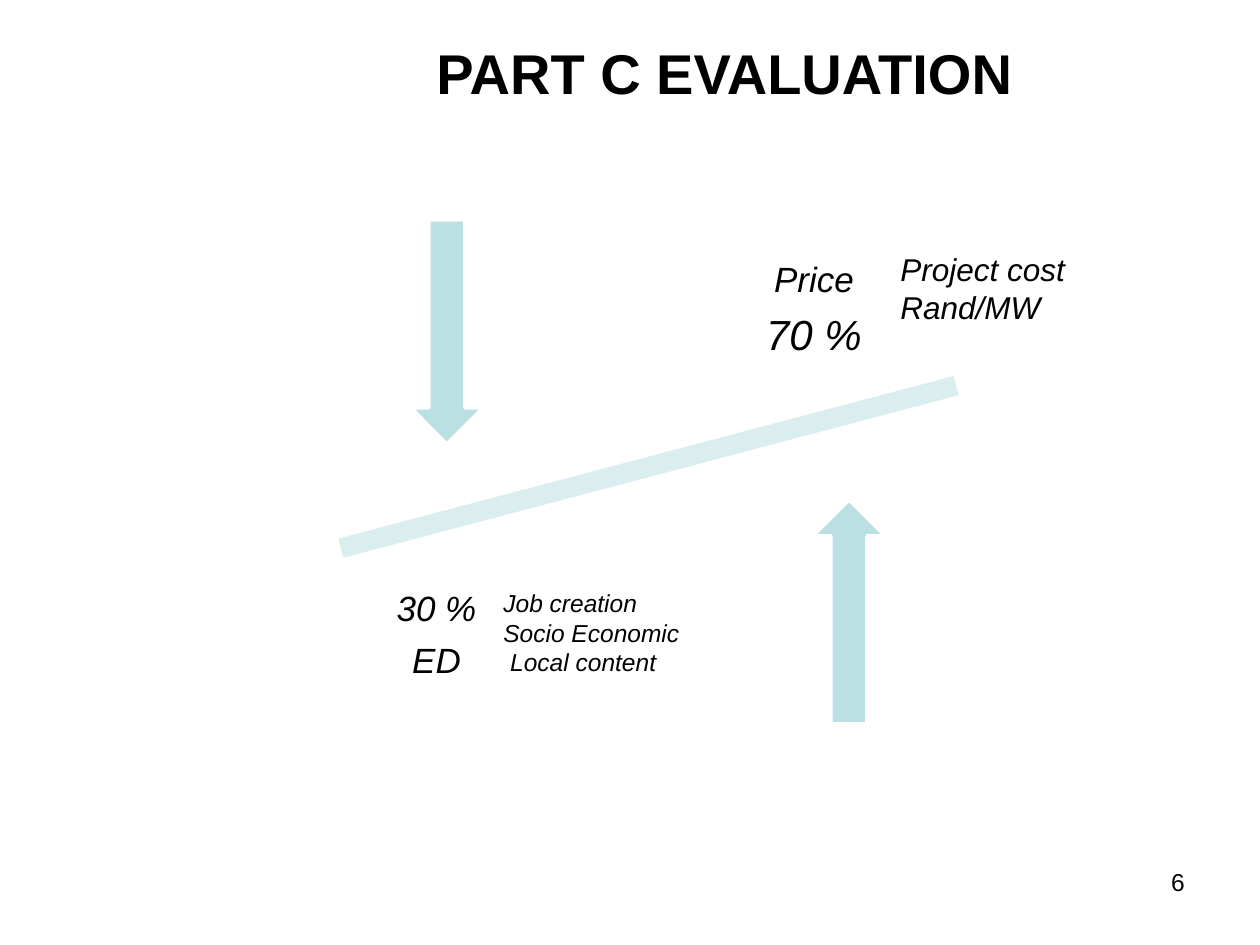
from pptx import Presentation
from pptx.dml.color import RGBColor
from pptx.enum.shapes import MSO_SHAPE
from pptx.enum.text import MSO_ANCHOR, MSO_AUTO_SIZE, PP_ALIGN
from pptx.util import Emu, Pt

PX_PER_INCH = 126
TITLE_ONLY_LAYOUT = 5


def px(length):
    return Emu(round(length * 914400 / PX_PER_INCH))


def color(hex_string):
    return RGBColor.from_string(hex_string)


def write_text(frame, lines, sizes, font="Arial", text_color="000000", bold=False,
               italic=False, align=PP_ALIGN.LEFT, line_spacing=None, space_after=None):
    """Write one paragraph per line, each with its own size in points."""
    for index, (line, size) in enumerate(zip(lines, sizes)):
        paragraph = frame.paragraphs[0] if index == 0 else frame.add_paragraph()
        paragraph.alignment = align
        if line_spacing is not None:
            paragraph.line_spacing = line_spacing
        if space_after is not None:
            paragraph.space_after = Pt(space_after)
        run = paragraph.add_run()
        run.text = line
        run.font.name = font
        run.font.size = Pt(size)
        run.font.bold = bold
        run.font.italic = italic
        run.font.color.rgb = color(text_color)


class BalanceSlide:
    arrow_fill = "BBE0E3"
    beam_fill = "DAEDEF"
    outline = "FFFFFF"
    weight_inset = 20

    def __init__(self, presentation):
        layout = presentation.slide_layouts[TITLE_ONLY_LAYOUT]
        self.slide = presentation.slides.add_slide(layout)

    def title(self, text, left, top, width, height):
        shape = self.slide.shapes.title
        shape.left, shape.top = px(left), px(top)
        shape.width, shape.height = px(width), px(height)
        frame = shape.text_frame
        frame.word_wrap = True
        frame.vertical_anchor = MSO_ANCHOR.TOP
        frame.margin_top = px(12)
        write_text(frame, [text], [32], bold=True, align=PP_ALIGN.CENTER)

    def text_box(self, left, top, width, height):
        box = self.slide.shapes.add_textbox(px(left), px(top), px(width), px(height))
        box.text_frame.word_wrap = True
        return box.text_frame

    def page_number(self, text, *bounds):
        write_text(self.text_box(*bounds), [text], [14], align=PP_ALIGN.RIGHT)

    def weight(self, lines, sizes, *bounds):
        frame = self.text_box(*bounds)
        frame.vertical_anchor = MSO_ANCHOR.MIDDLE
        frame.margin_left = frame.margin_right = px(self.weight_inset)
        frame.margin_top = frame.margin_bottom = px(self.weight_inset)
        write_text(frame, lines, sizes, italic=True, align=PP_ALIGN.CENTER,
                   line_spacing=0.9, space_after=8)

    def criteria(self, lines, size, *bounds):
        frame = self.text_box(*bounds)
        frame.auto_size = MSO_AUTO_SIZE.SHAPE_TO_FIT_TEXT
        write_text(frame, lines, [size] * len(lines), italic=True)

    def shape(self, kind, fill, left, top, width, height, rotation=0):
        shape = self.slide.shapes.add_shape(kind, px(left), px(top), px(width), px(height))
        shape.shadow.inherit = False
        shape.rotation = rotation
        shape.fill.solid()
        shape.fill.fore_color.rgb = color(fill)
        shape.line.color.rgb = color(self.outline)
        shape.line.width = Pt(2)

    def beam(self, *bounds, rotation):
        self.shape(MSO_SHAPE.MATH_MINUS, self.beam_fill, *bounds, rotation=rotation)

    def arrow(self, kind, left, top):
        self.shape(kind, self.arrow_fill, left, top, 72, 224)


def main():
    presentation = Presentation()
    presentation.slide_width = px(1260)
    presentation.slide_height = px(945)
    slide = BalanceSlide(presentation)

    # Heading and page number
    slide.title("PART C EVALUATION", 189, 26, 1071, 139)
    slide.page_number("6", 903, 861, 294, 66)

    # Tilted beam with the two arrows
    slide.beam(213, 417, 871, 100, rotation=345.2)
    slide.arrow(MSO_SHAPE.DOWN_ARROW, 411, 220)
    slide.arrow(MSO_SHAPE.UP_ARROW, 813, 500)

    # Weights on each side
    slide.weight(["Price", "70 %"], [20, 24], 629, 193, 370, 236)
    slide.weight(["30 %", "ED"], [20, 20], 296, 518, 281, 236)

    # Criteria beside each weight
    slide.criteria(["Job creation", "Socio Economic", " Local content"], 14,
                   491, 582, 228, 102)
    slide.criteria(["Project cost", "Rand/MW"], 18, 888, 244, 248, 165)

    presentation.save("out.pptx")


if __name__ == "__main__":
    main()
